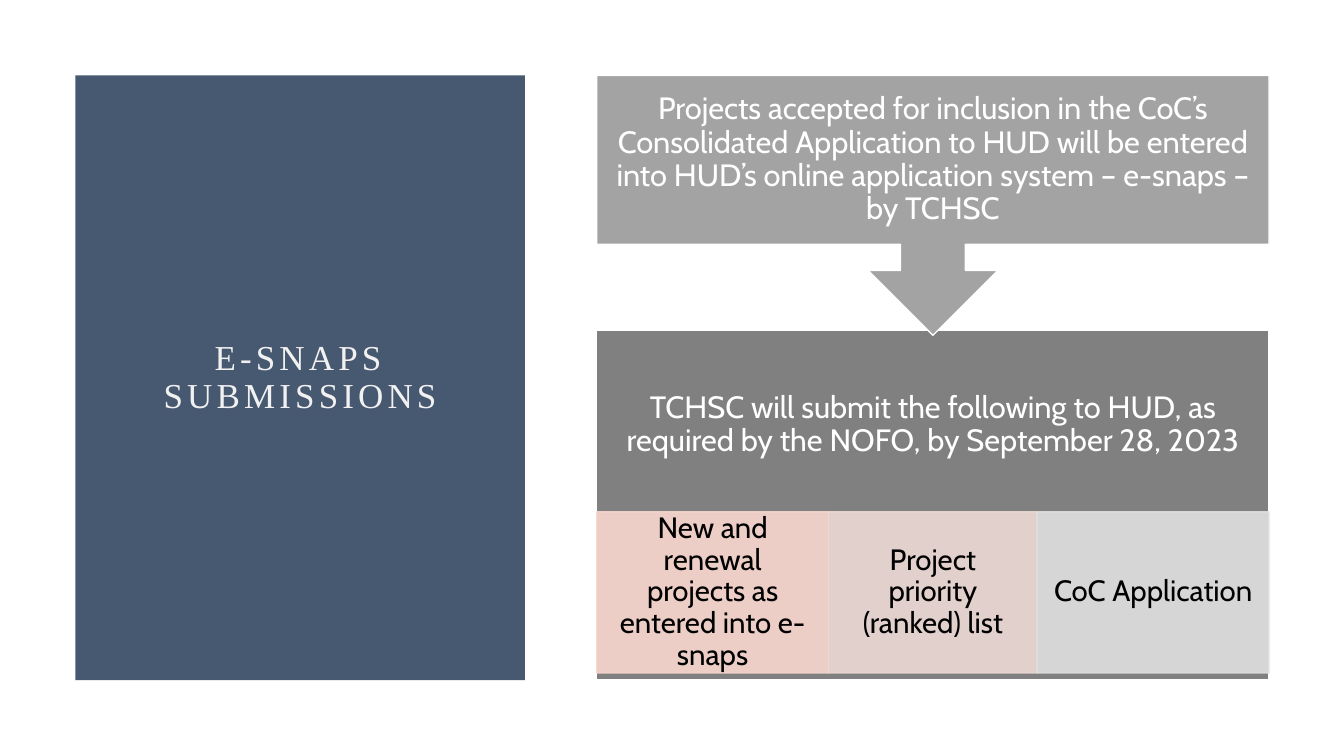
from lxml import etree
from pptx import Presentation
from pptx.dml.color import RGBColor
from pptx.enum.shapes import MSO_SHAPE
from pptx.enum.text import MSO_ANCHOR, PP_ALIGN
from pptx.oxml.ns import qn
from pptx.util import Cm, Pt

MARGIN = 1.9
FLOW_LEFT, FLOW_WIDTH = 15.04, 16.94
SUBMIT_TOP, SUBMIT_HEIGHT, SUBMIT_TEXT_HEIGHT = 8.33, 8.81, 4.75
ITEM_TOP, ITEM_HEIGHT = 12.9, 4.06
STEP_INSET = 0.43

# Text, width and colour of each submitted item
ITEMS = [
    ("New and renewal projects as entered into e-snaps", 5.84, "F8D7CE"),
    ("Project priority (ranked) list", 5.26, "EDD9D6"),
    ("CoC Application", 5.84, "E0E0E0"),
]


def color(hex_value):
    return RGBColor.from_string(hex_value)


def set_opacity(fill_format, percent):
    """Make a solid fill partly transparent."""
    for color_element in fill_format._xPr.iter(qn("a:srgbClr")):
        alpha = etree.SubElement(color_element, qn("a:alpha"))
        alpha.set("val", str(percent * 1000))


def add_block(slide, preset, left, top, width, height, fill, line=None):
    shape = slide.shapes.add_shape(preset, Cm(left), Cm(top), Cm(width), Cm(height))
    shape.shadow.inherit = False
    shape.fill.solid()
    shape.fill.fore_color.rgb = color(fill)
    if line:
        shape.line.color.rgb = color(line)
        shape.line.width = Pt(1)
    else:
        shape.line.fill.background()
    return shape


def write_text(shape, text, size, hex_value, insets, font_name="Cabin"):
    """Write centred text; insets are left, top, right and bottom."""
    frame = shape.text_frame
    frame.word_wrap = True
    frame.vertical_anchor = MSO_ANCHOR.MIDDLE
    frame.margin_left, frame.margin_top, frame.margin_right, frame.margin_bottom = map(Cm, insets)
    paragraph = frame.paragraphs[0]
    paragraph.text = text
    paragraph.alignment = PP_ALIGN.CENTER
    paragraph.line_spacing = 0.9
    paragraph.font.name = font_name
    paragraph.font.size = Pt(size)
    paragraph.font.color.rgb = color(hex_value)
    return paragraph


def add_title_panel(slide):
    panel = add_block(slide, MSO_SHAPE.RECTANGLE, MARGIN, MARGIN, 11.33, 15.24, "475871")
    paragraph = write_text(panel, "E-SNAPS SUBMISSIONS", 25, "F2F1F1",
                           (2.15, 2, 2.15, 2), "Times New Roman")
    paragraph.runs[0].font._element.set("spc", "300")


def add_submission_step(slide):
    step = add_block(slide, MSO_SHAPE.RECTANGLE, FLOW_LEFT, SUBMIT_TOP,
                     FLOW_WIDTH, SUBMIT_HEIGHT, "808080", "FFFFFF")
    below_text = SUBMIT_HEIGHT - SUBMIT_TEXT_HEIGHT
    write_text(step, "TCHSC will submit the following to HUD, as required by the NOFO, "
               "by September 28, 2023", 22, "FFFFFF",
               (STEP_INSET, STEP_INSET, STEP_INSET, below_text + STEP_INSET))


def add_items(slide):
    left = FLOW_LEFT
    for text, width, fill in ITEMS:
        item = add_block(slide, MSO_SHAPE.RECTANGLE, left, ITEM_TOP, width, ITEM_HEIGHT, fill, fill)
        set_opacity(item.fill, 90)
        write_text(item, text, 21, "000000", (0.41, 0.08, 0.41, 0.08))
        left += width


def add_entry_step(slide):
    callout = add_block(slide, MSO_SHAPE.UP_ARROW_CALLOUT, FLOW_LEFT, MARGIN,
                        FLOW_WIDTH, 6.55, "A3A3A3", "FFFFFF")
    callout.rotation = 180
    # The callout is turned over, so its text sits in an upright box
    label = slide.shapes.add_textbox(Cm(FLOW_LEFT), Cm(MARGIN), Cm(FLOW_WIDTH), Cm(4.25))
    write_text(label, "Projects accepted for inclusion in the CoC’s Consolidated Application "
               "to HUD will be entered into HUD’s online application system – e-snaps – by TCHSC",
               22, "FFFFFF", (STEP_INSET,) * 4)


def main():
    presentation = Presentation()
    presentation.slide_width = Cm(33.87)
    presentation.slide_height = Cm(19.05)
    slide = presentation.slides.add_slide(presentation.slide_layouts[6])

    # Left: title; right: two steps with the submitted items
    add_title_panel(slide)
    add_submission_step(slide)
    add_items(slide)
    add_entry_step(slide)

    presentation.save("out.pptx")


if __name__ == "__main__":
    main()
